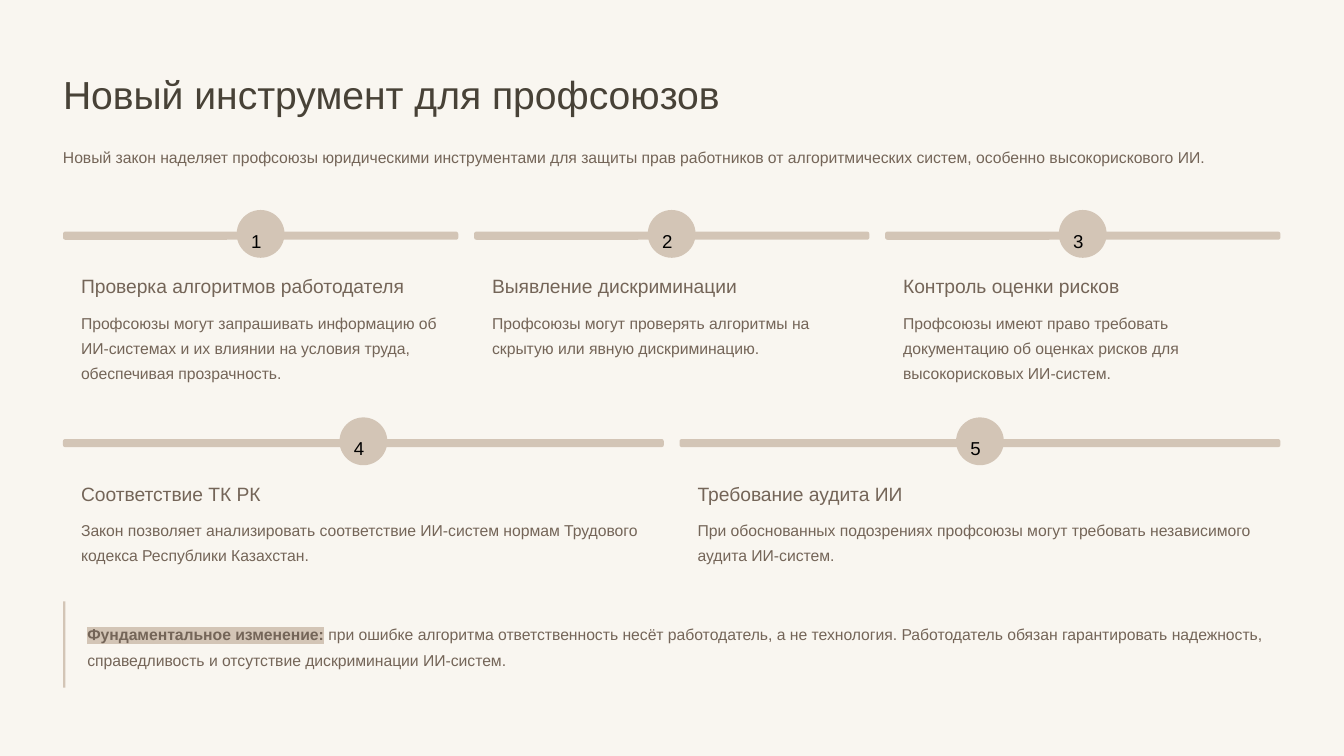
from lxml import etree
from pptx import Presentation
from pptx.dml.color import RGBColor
from pptx.enum.shapes import MSO_SHAPE
from pptx.enum.text import MSO_ANCHOR, MSO_AUTO_SIZE, PP_ALIGN
from pptx.oxml.ns import qn
from pptx.util import Pt

RECTANGLE, ROUNDED, OVAL = MSO_SHAPE.RECTANGLE, MSO_SHAPE.ROUNDED_RECTANGLE, MSO_SHAPE.OVAL
TOP, LEFT, NO_AUTOFIT = MSO_ANCHOR.TOP, PP_ALIGN.LEFT, MSO_AUTO_SIZE.NONE

CREAM = RGBColor(0xF9, 0xF6, 0xF0)
SAND = RGBColor(0xD3, 0xC5, 0xB6)
BROWN = RGBColor(0x74, 0x65, 0x58)
DARK = RGBColor(0x48, 0x42, 0x37)
BLACK = RGBColor(0, 0, 0)

TITLE = "Новый инструмент для профсоюзов"
INTRO = ("Новый закон наделяет профсоюзы юридическими инструментами для защиты прав "
         "работников от алгоритмических систем, особенно высокорискового ИИ.")
ROWS = [
    [("Проверка алгоритмов работодателя",
      "Профсоюзы могут запрашивать информацию об ИИ-системах и их влиянии на условия "
      "труда, обеспечивая прозрачность."),
     ("Выявление дискриминации",
      "Профсоюзы могут проверять алгоритмы на скрытую или явную дискриминацию."),
     ("Контроль оценки рисков",
      "Профсоюзы имеют право требовать документацию об оценках рисков для "
      "высокорисковых ИИ-систем.")],
    [("Соответствие ТК РК",
      "Закон позволяет анализировать соответствие ИИ-систем нормам Трудового кодекса "
      "Республики Казахстан."),
     ("Требование аудита ИИ",
      "При обоснованных подозрениях профсоюзы могут требовать независимого аудита "
      "ИИ-систем.")],
]
NOTE_LEAD = "Фундаментальное изменение:"
NOTE_REST = (" при ошибке алгоритма ответственность несёт работодатель, а не технология. "
             "Работодатель обязан гарантировать надежность, справедливость и отсутствие "
             "дискриминации ИИ-систем.")

# Style: size, line spacing, colour
TITLE_STYLE = (33.5, 42, DARK)
HEADING_STYLE = (16.5, 21, BROWN)
BODY_STYLE = (13.5, 21.5, BROWN)
NUMBER_STYLE = (16, 26, BLACK)

MARGIN, CONTENT_WIDTH, GAP = 54, 1043.5, 13.5
ROW_TOP, ROW_STEP = 180, 177.8
CIRCLE, BAR_HEIGHT, PADDING = 41, 7, 15.5


def write(shape, text, style, wrap=True):
    """Fill a text shape with one left-aligned paragraph."""
    size, spacing, color = style
    frame = shape.text_frame
    frame.text = text
    frame.word_wrap = wrap
    frame.auto_size = NO_AUTOFIT
    frame.vertical_anchor = TOP
    frame.margin_left = frame.margin_right = frame.margin_top = frame.margin_bottom = 0
    paragraph = frame.paragraphs[0]
    paragraph.alignment = LEFT
    paragraph.line_spacing = Pt(spacing)
    format_run(paragraph.runs[0], size, color)
    return paragraph


def format_run(run, size, color):
    run.font.name = "Arial"
    run.font.size = Pt(size)
    run.font.color.rgb = color


def highlight(run, color):
    mark = etree.Element(qn("a:highlight"))
    etree.SubElement(mark, qn("a:srgbClr"), val=str(color))
    run._r.get_or_add_rPr().find(qn("a:solidFill")).addnext(mark)


def add_text(slide, left, top, width, height, text, style, wrap=True):
    box = slide.shapes.add_textbox(Pt(left), Pt(top), Pt(width), Pt(height))
    return write(box, text, style, wrap)


def add_block(slide, kind, left, top, width, height):
    shape = slide.shapes.add_shape(kind, Pt(left), Pt(top), Pt(width), Pt(height))
    shape.shadow.inherit = False
    shape.fill.solid()
    shape.fill.fore_color.rgb = SAND
    shape.line.fill.background()
    return shape


def add_step(slide, number, left, top, width, heading, body):
    bar = add_block(slide, ROUNDED, left, top + 18.5, width, BAR_HEIGHT)
    bar.adjustments[0] = 0.28
    circle_left = left + (width - CIRCLE) / 2
    add_block(slide, OVAL, circle_left, top, CIRCLE, CIRCLE)
    add_text(slide, circle_left + 12.3, top + 10, 16.5, 20, str(number), NUMBER_STYLE, False)
    text_left, text_width = left + PADDING, width - 2 * PADDING
    add_text(slide, text_left, top + 54, text_width, 21, heading, HEADING_STYLE, False)
    add_text(slide, text_left, top + 83.5, text_width, 64.5, body, BODY_STYLE)


def main():
    presentation = Presentation()
    presentation.slide_width, presentation.slide_height = Pt(1152), Pt(648)
    slide = presentation.slides.add_slide(presentation.slide_layouts[5])
    slide.background.fill.solid()
    slide.background.fill.fore_color.rgb = CREAM

    title = slide.shapes.title
    title.left, title.top, title.width, title.height = Pt(MARGIN), Pt(58.5), Pt(598), Pt(42.5)
    write(title, TITLE, TITLE_STYLE, False)
    add_text(slide, MARGIN, 121.7, CONTENT_WIDTH, 43, INTRO, BODY_STYLE)

    number = 1
    for row_index, steps in enumerate(ROWS):
        width = (CONTENT_WIDTH - GAP * (len(steps) - 1)) / len(steps)
        for column, (heading, body) in enumerate(steps):
            left = MARGIN + column * (width + GAP)
            add_step(slide, number, left, ROW_TOP + row_index * ROW_STEP, width, heading, body)
            number += 1

    note = add_text(slide, 74.8, 530.6, 1023, 43, NOTE_LEAD, BODY_STYLE)
    lead = note.runs[0]
    lead.font.bold = True
    highlight(lead, SAND)
    rest = note.add_run()
    rest.text = NOTE_REST
    format_run(rest, BODY_STYLE[0], BROWN)
    add_block(slide, RECTANGLE, MARGIN, 515.5, 2, 74)

    presentation.save("out.pptx")


if __name__ == "__main__":
    main()
